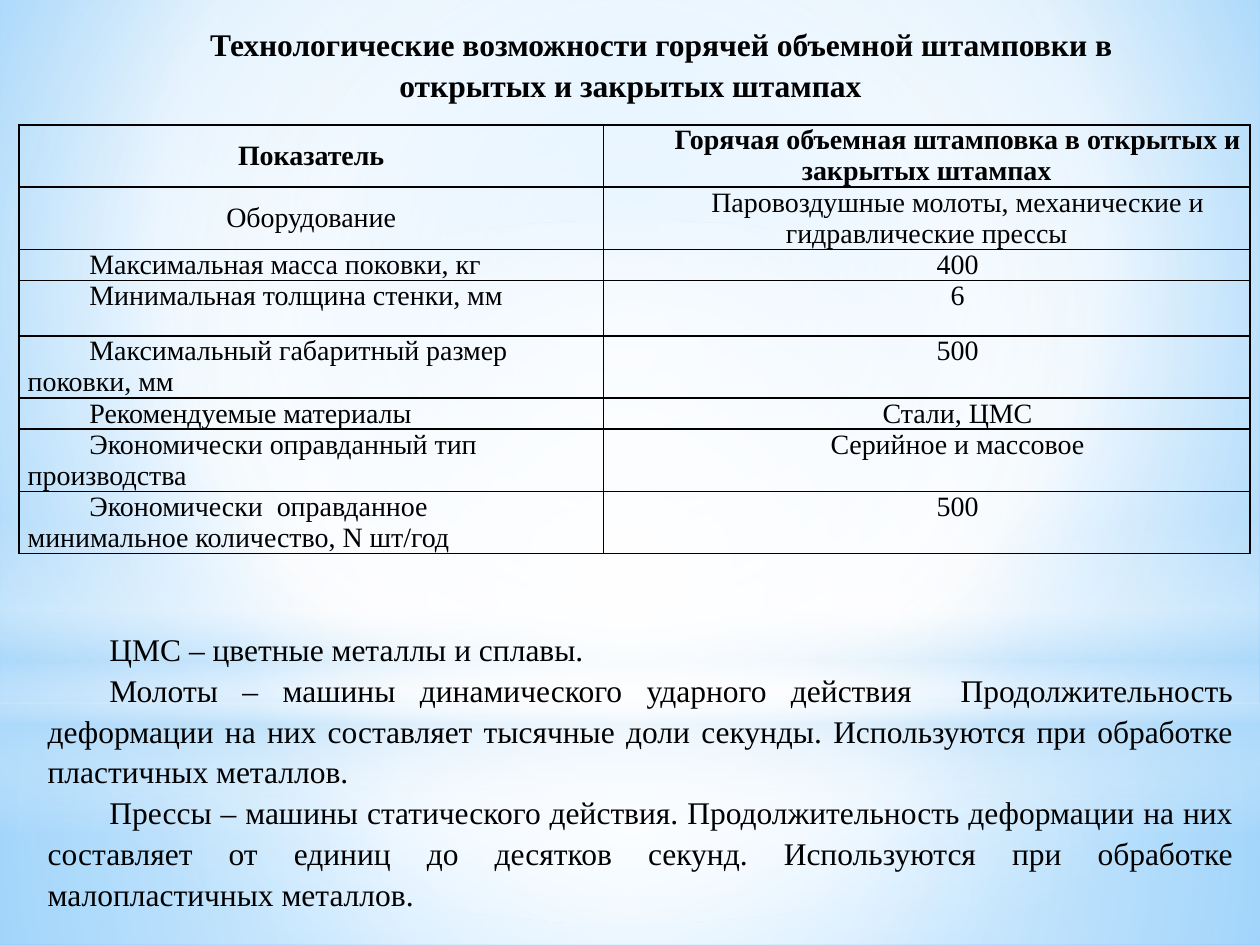
from lxml import etree
from pptx import Presentation
from pptx.dml.color import RGBColor
from pptx.enum.shapes import MSO_SHAPE
from pptx.enum.text import MSO_ANCHOR, MSO_AUTO_SIZE, PP_ALIGN
from pptx.oxml import parse_xml
from pptx.oxml.ns import nsdecls, qn
from pptx.util import Inches, Pt

RECT, OVAL = MSO_SHAPE.RECTANGLE, MSO_SHAPE.OVAL
TOP, MID = MSO_ANCHOR.TOP, MSO_ANCHOR.MIDDLE
LEFT, CENTER, JUST = PP_ALIGN.LEFT, PP_ALIGN.CENTER, PP_ALIGN.JUSTIFY
GROW = MSO_AUTO_SIZE.SHAPE_TO_FIT_TEXT

FONT = "Times New Roman"
INDENT = Inches(0.49)
COLORS = {"ink": "000000", "white": "FFFFFF", "pale": "B4DCFA",
          "sky": "9ED5FF", "blue": "5BB9FF"}

deck = Presentation()
deck.slide_width, deck.slide_height = Inches(10), Inches(7.5)
wide, high = deck.slide_width / 100, deck.slide_height / 100
slide = deck.slides.add_slide(deck.slide_layouts[5])


def paint(props, stops, focus):
    """Swap the solid fill in props for a gradient: circular around focus
    (left, top, right, bottom in percent), or top to bottom without one."""
    marks = "".join(
        f'<a:gs pos="{pos * 1000}"><a:srgbClr val="{COLORS[name]}">'
        f'<a:alpha val="{alpha * 1000}"/></a:srgbClr></a:gs>'
        for pos, name, alpha in stops)
    if focus:
        sides = " ".join(f'{side}="{share * 1000}"' for side, share in zip("ltrb", focus))
        way = f'<a:path path="circle"><a:fillToRect {sides}/></a:path>'
    else:
        way = '<a:lin ang="5400000" scaled="0"/>'
    grad = parse_xml(f'<a:gradFill {nsdecls("a")} rotWithShape="1">'
                     f'<a:gsLst>{marks}</a:gsLst>{way}</a:gradFill>')
    props.replace(props.find(qn("a:solidFill")), grad)


def style(par, size, align, indent=INDENT, bold=False):
    par.alignment = align
    props = par._p.get_or_add_pPr()
    props.set("marL", "0")
    props.set("indent", str(indent))
    for run in par.runs:
        run.font.name, run.font.size, run.font.bold = FONT, Pt(size), bold
        run.font.color.rgb = RGBColor.from_string(COLORS["ink"])


# Background and soft light panels, with boxes in percent of the slide
slide.background.fill.solid()
paint(slide.element.find(".//" + qn("p:bgPr")),
      [(0, "sky", 100), (60, "white", 100), (100, "blue", 100)], (20, 10, 20, 60))

MIDDLE = (50, 50, 50, 50)
panels = [
    (RECT, 74.4, 25.6, MIDDLE,
     [(0, "white", 91), (37, "white", 76), (100, "pale", 79)]),
    (RECT, 0, 74.4, MIDDLE,
     [(0, "white", 89), (48, "white", 62), (100, "pale", 79)]),
    (RECT, 54.9, 33.3, None,
     [(0, "white", 0), (29, "white", 30), (45, "pale", 40),
      (55, "white", 26), (65, "pale", 60), (100, "white", 0)]),
    (OVAL, 23.3, 74.4, MIDDLE, [(0, "white", 100), (56, "white", 0)]),
]
for kind, top, tall, focus, stops in panels:
    panel = slide.shapes.add_shape(kind, 0, int(top * high),
                                   deck.slide_width, int(tall * high))
    panel.shadow.inherit = False
    panel.line.fill.background()
    panel.fill.solid()
    paint(panel.element.spPr, stops, focus)

# Table
rows = [
    ("Показатель", "Горячая объемная штамповка в открытых и закрытых штампах"),
    ("Оборудование", "Паровоздушные молоты, механические и гидравлические прессы"),
    ("Максимальная масса поковки, кг", "400"),
    ("Минимальная толщина стенки, мм", "6"),
    ("Максимальный габаритный размер поковки, мм", "500"),
    ("Рекомендуемые материалы", "Стали, ЦМС"),
    ("Экономически оправданный тип производства", "Серийное и массовое"),
    ("Экономически  оправданное минимальное количество, N шт/год", "500"),
]
lines = [2, 2, 1, 2, 2, 1, 2, 2]
step = Inches(0.22)
table = slide.shapes.add_table(
    len(rows), 2, int(1.5 * wide), int(13.2 * high),
    int(97.7 * wide), step * sum(lines)).table
table.first_row = table.horz_banding = False
for col, share in zip(table.columns, (46.4, 51.3)):
    col.width = int(share * wide)
for r, texts in enumerate(rows):
    table.rows[r].height = step * lines[r]
    for c, text in enumerate(texts):
        cell = table.cell(r, c)
        cell.text_frame.text = text
        cell.margin_left = cell.margin_right = Inches(0.07)
        cell.margin_top = cell.margin_bottom = 0
        cell.vertical_anchor = MID if r < 2 else TOP
        style(cell.text_frame.paragraphs[0], 16,
              CENTER if c or r < 2 else LEFT,
              INDENT if c or r > 1 else 0, bold=r == 0)
        cell.fill.background()
        props = cell._tc.get_or_add_tcPr()
        for at, side in enumerate("LRTB"):
            edge = etree.Element(qn(f"a:ln{side}"), w=str(Pt(1)))
            fill = etree.SubElement(edge, qn("a:solidFill"))
            etree.SubElement(fill, qn("a:srgbClr"), val=COLORS["ink"])
            props.insert(at, edge)

# Title, brought in front of the panels, and notes on terms
title = slide.shapes.title
title.element.getparent().append(title.element)
notes = slide.shapes.add_textbox(0, 0, 0, 0)
blocks = [
    (title, (9.1, 1.7, 81.9, 9.5), CENTER, True, [
        "Технологические возможности горячей объемной штамповки "
        "в открытых и закрытых штампах"]),
    (notes, (2.8, 65.7, 96.1, 29.6), JUST, False, [
        "ЦМС – цветные металлы и сплавы.",
        "Молоты – машины динамического ударного действия  Продолжительность "
        "деформации на них составляет тысячные доли секунды. "
        "Используются при обработке пластичных металлов.",
        "Прессы – машины статического действия. Продолжительность деформации "
        "на них составляет от единиц до десятков секунд. "
        "Используются при обработке малопластичных металлов."]),
]
for shape, (x, y, w, h), align, bold, texts in blocks:
    shape.left, shape.top = int(x * wide), int(y * high)
    shape.width, shape.height = int(w * wide), int(h * high)
    frame = shape.text_frame
    frame.text = "\n".join(texts)
    frame.word_wrap, frame.auto_size = True, GROW
    frame.vertical_anchor = TOP
    for par in frame.paragraphs:
        style(par, 18, align, bold=bold)
        par.line_spacing = 1.08

deck.save("out.pptx")
